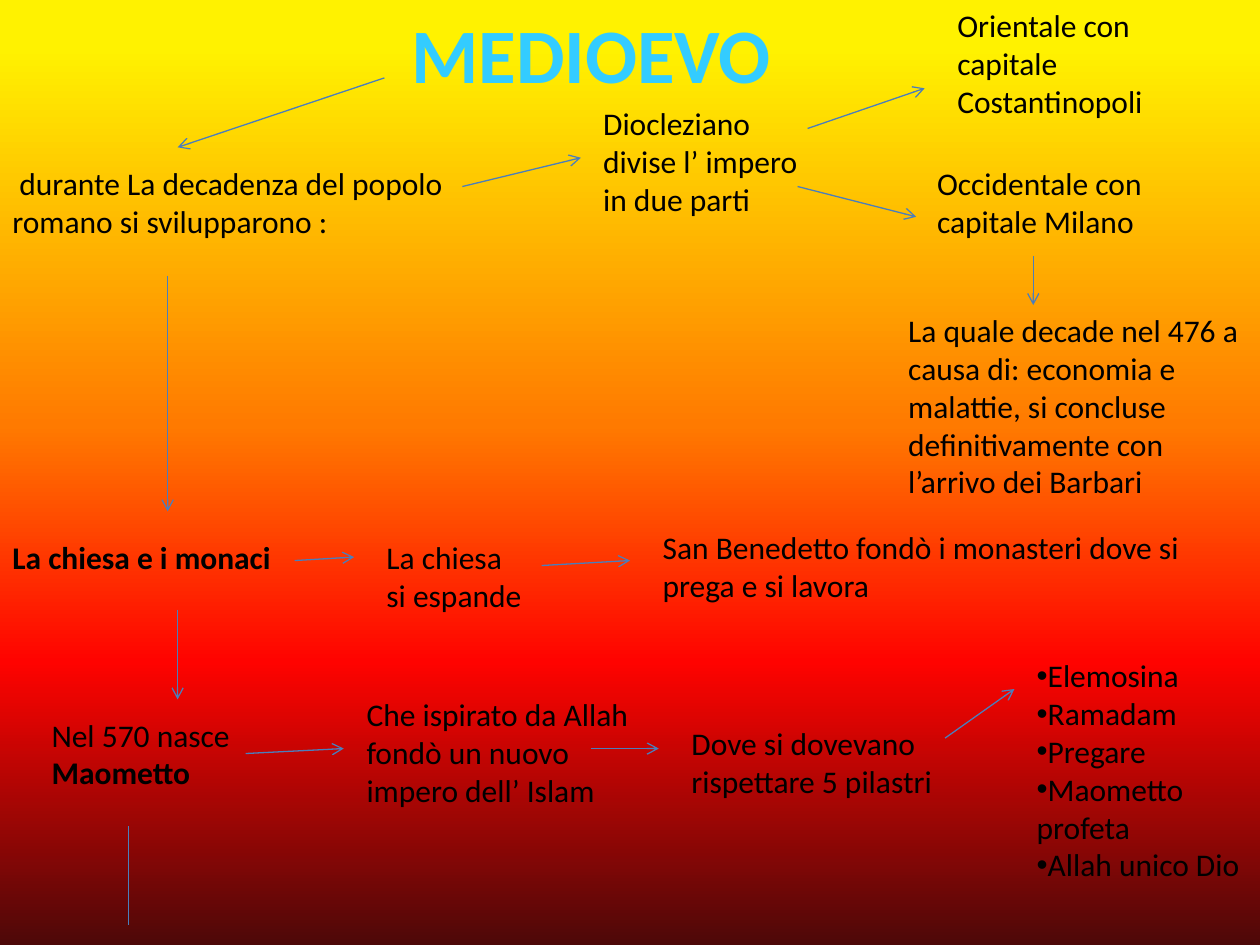
"""Build a one-slide concept map of the Middle Ages in Italian."""
import lxml.etree
import pptx
import pptx.dml.color
import pptx.enum.shapes
import pptx.enum.text
import pptx.oxml.ns
import pptx.util

Cm = pptx.util.Cm
qn = pptx.oxml.ns.qn
COLORS = {"title": "33CCFF", "text": "000000", "line": "4B7EBC"}
BACKGROUND = {5: "FFF200", 45: "FF7A00", 70: "FF0300", 100: "4D0808"}


def add_text(page, place, paragraphs, size=18, color="text", centered=False, bullet=None):
    box = page.shapes.add_textbox(*[Cm(length) for length in place])
    frame = box.text_frame
    frame.word_wrap = True
    frame.auto_size = pptx.enum.text.MSO_AUTO_SIZE.SHAPE_TO_FIT_TEXT
    for index, runs in enumerate(paragraphs):
        para = frame.add_paragraph() if index else frame.paragraphs[0]
        if centered:
            para.alignment = pptx.enum.text.PP_ALIGN.CENTER
        if bullet:
            properties = para._p.get_or_add_pPr()
            lxml.etree.SubElement(properties, qn("a:buFont"), typeface="Arial")
            lxml.etree.SubElement(properties, qn("a:buChar"), char=bullet)
        for text, bold in runs:
            span = para.add_run()
            span.text = text
            span.font.name = "Calibri"
            span.font.size = pptx.util.Pt(size)
            span.font.bold = bold
            span.font.color.rgb = pptx.dml.color.RGBColor.from_string(COLORS[color])


def add_line(page, ends, arrow=True):
    straight = pptx.enum.shapes.MSO_CONNECTOR.STRAIGHT
    line = page.shapes.add_connector(straight, *[Cm(length) for length in ends])
    line.line.width = pptx.util.Pt(0.75)
    line.line.color.rgb = pptx.dml.color.RGBColor.from_string(COLORS["line"])
    if arrow:
        lxml.etree.SubElement(line.line._get_or_add_ln(), qn("a:tailEnd"), type="arrow")
    lxml.etree.SubElement(line._element.spPr, qn("a:effectLst"))


deck = pptx.Presentation()
deck.slide_width, deck.slide_height = Cm(25.4), Cm(19.05)
page = deck.slides.add_slide(deck.slide_layouts[6])

fill = page.background.fill
fill.gradient()
fill.gradient_angle = 270
stops = page._element.find(".//" + qn("a:gsLst"))
for stop in list(stops):
    stops.remove(stop)
for percent, color in BACKGROUND.items():
    stop = lxml.etree.SubElement(stops, qn("a:gs"), pos=str(percent * 1000))
    lxml.etree.SubElement(stop, qn("a:srgbClr"), val=color)

add_text(page, (2.6, 0, 18.64, 2.13), [[("MEDIOEVO", True)]], 44, "title", centered=True)

notions = [
    ((0, 3.18, 9.32, 1.8), [" durante La decadenza del popolo", "romano si svilupparono :"]),
    ((11.91, 1.98, 4.95, 2.57), ["Diocleziano divise l’ impero in due parti"]),
    ((19.05, 0, 4.95, 2.57), ["Orientale con capitale Costantinopoli"]),
    ((18.64, 3.18, 5.36, 1.8), ["Occidentale con capitale Milano"]),
    ((18.06, 6.15, 7.34, 4.11), [
        "La quale decade nel 476 a causa di: economia e malattie, "
        "si concluse definitivamente con l’arrivo dei Barbari"]),
    ((7.54, 10.72, 3.76, 1.8), ["La chiesa", "si espande"]),
    ((13.11, 10.52, 11.3, 1.8), ["San Benedetto fondò i monasteri dove si prega e si lavora"]),
    ((7.14, 13.89, 5.94, 2.57), ["Che ispirato da Allah", "fondò un nuovo impero dell’ Islam"]),
    ((13.69, 14.48, 5.94, 1.8), ["Dove si dovevano rispettare 5 pilastri"]),
]
for place, texts in notions:
    add_text(page, place, [[(text, False)] for text in texts])

add_text(page, (0, 10.72, 7.14, 1.02), [[("La chiesa e i monaci", True)]])
add_text(page, (0.79, 14.3, 4.37, 1.8), [[("Nel 570 nasce ", False), ("Maometto", True)]])

pillars = ["Elemosina", "Ramadam", "Pregare", "Maometto profeta", "Allah unico Dio"]
add_text(page, (20.65, 13.11, 4.75, 4.88), [[(pillar, False)] for pillar in pillars], bullet="•")

arrows = [
    (7.75, 1.57, 3.58, 2.97),
    (9.32, 3.76, 11.71, 3.18),
    (16.28, 2.59, 18.64, 1.78),
    (16.08, 3.76, 18.47, 4.37),
    (20.83, 5.16, 20.83, 6.15),
    (3.38, 5.56, 3.38, 10.31),
    (5.94, 11.3, 7.14, 11.23),
    (10.92, 11.4, 12.7, 11.3),
    (3.58, 12.29, 3.58, 14.1),
    (4.95, 15.19, 6.93, 15.09),
    (11.91, 15.09, 13.28, 15.09),
    (19.05, 14.88, 20.45, 13.89),
]
for ends in arrows:
    add_line(page, ends)
add_line(page, (2.59, 16.66, 2.59, 18.64), arrow=False)

deck.save("out.pptx")
